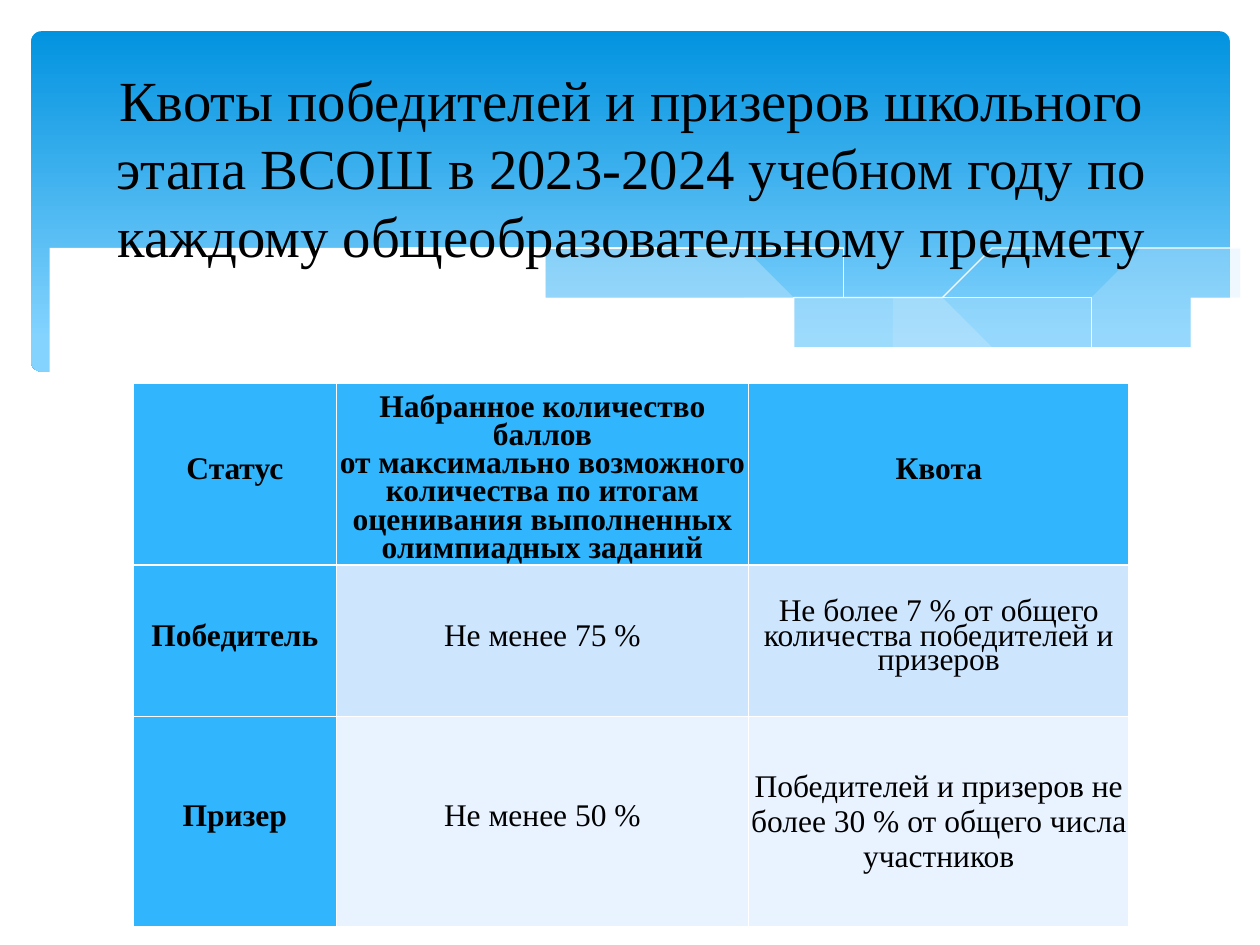
from lxml import etree
from pptx import Presentation
from pptx.dml.color import RGBColor as RGB
from pptx.enum.shapes import MSO_SHAPE as Kind
from pptx.enum.text import MSO_ANCHOR as Anchor, PP_ALIGN as Align
from pptx.oxml.ns import qn
from pptx.util import Cm, Pt

FONT = "Times New Roman"
BLUE, DARK, PALE = "31B6FD", "CEE5FE", "E8F3FF"

# Wave knots, in centimetres
RIGHT_TOP = [(24.77, 5.08), (23.75, 5.26), (22.63, 5.49), (21.13, 5.84),
             (19.13, 6.3), (16.79, 6.73)]
RIGHT_LOW = [(16.79, 6.73), (17.91, 6.88), (19.23, 7.01), (20.68, 7.06),
             (21.92, 6.99), (22.99, 6.83), (23.93, 6.58), (24.77, 6.27)]
MID_TOP = [(22.68, 6.93), (20.5, 6.6), (17.93, 6.1), (15.98, 5.64),
           (14.1, 5.21), (12.42, 4.93), (10.67, 4.75), (9.17, 4.7),
           (7.26, 4.85)]
MID_LOW = [(7.26, 4.85), (9.19, 5.16), (11.4, 5.64), (13.46, 6.1),
           (15.7, 6.55), (17.65, 6.86), (19.33, 7.04), (20.78, 7.06),
           (22.68, 6.93)]
FALL = [(7.85, 4.95), (9.22, 4.8), (11, 4.75), (12.95, 4.88), (14.78, 5.08),
        (16.89, 5.41), (19.3, 5.92), (21.11, 6.38), (23.04, 6.91)]
RISE = [(15.57, 6.53), (17.65, 5.97), (19.71, 5.49), (22, 5.05),
        (23.47, 4.83), (24.77, 4.7)]
EDGE = [(24.82, 6.25), (23.62, 6.65), (22.23, 6.93), (20.55, 7.04),
        (18.44, 6.91), (16.46, 6.65), (14.1, 6.22), (11.35, 5.59),
        (9.27, 5.13), (7.42, 4.83), (5.84, 4.7), (4.5, 4.67),
        (3.02, 4.75), (1.93, 4.95), (0.58, 5.41)]
BASE = [(0.58, 8.36), (24.82, 8.36)]

TITLE = ("Квоты победителей и призеров школьного этапа ВСОШ в 2023-2024 "
         "учебном году по каждому общеобразовательному предмету\v")
ROWS = [
    ["Статус",
     "Набранное количество баллов\vот максимально возможного\v"
     "количества по итогам\vоценивания выполненных\vолимпиадных заданий",
     "Квота"],
    ["Победитель", "Не менее 75 %",
     "Не более 7 % от общего количества победителей и призеров"],
    ["Призер", "Не менее 50 %",
     "Победителей и призеров не более 30 % от общего числа участников"],
]


def color(code):
    return RGB.from_string(code)


def smooth(knots, steps=5):
    """Points of a Catmull-Rom curve through the knots."""
    ends = [knots[0], *knots, knots[-1]]
    out = [knots[0]]
    for a, b, c, d in zip(ends, ends[1:], ends[2:], ends[3:]):
        for n in range(1, steps + 1):
            t = n / steps
            out.append(tuple(
                (2 * q + (r - p) * t + (2 * p - 5 * q + 4 * r - s) * t ** 2
                 + (3 * q - p - 3 * r + s) * t ** 3) / 2
                for p, q, r, s in zip(a, b, c, d)))
    return out


def add_path(slide, points, close):
    pen = slide.shapes.build_freeform(*points[0], scale=Cm(1))
    pen.add_line_segments(points[1:], close=close)
    shape = pen.convert_to_shape()
    shape.shadow.inherit = False
    return shape


def add_wave(slide, points, fill, alpha=100):
    shape = add_path(slide, points, True)
    shape.fill.solid()
    shape.fill.fore_color.rgb = color(fill)
    shape.line.fill.background()
    if alpha < 100:
        tone = shape._element.spPr.find(qn("a:solidFill"))[0]
        etree.SubElement(tone, qn("a:alpha"), val=str(alpha * 1000))


def add_curve(slide, knots):
    shape = add_path(slide, smooth(knots), False)
    shape.fill.background()
    shape.line.color.rgb = color("FFFFFF")
    shape.line.width = Pt(0)


def add_band(slide):
    band = slide.shapes.add_shape(Kind.ROUNDED_RECTANGLE, Cm(0.63), Cm(0.63),
                                  Cm(24.16), Cm(6.86))
    band.adjustments[0] = 0.03
    band.shadow.inherit = False
    band.line.fill.background()
    band.fill.gradient()
    band.fill.gradient_angle = 270
    stops = [(0, "0293E0"), (0.9, "83D3FE")]
    for stop, (place, code) in zip(band.fill.gradient_stops, stops):
        stop.position = place
        stop.color.rgb = color(code)


def set_text(frame, text, size, bold=False, gap=None):
    frame.text = text
    para = frame.paragraphs[0]
    para.alignment = Align.CENTER
    para.line_spacing = gap
    para.font.name, para.font.size, para.font.bold = FONT, Pt(size), bold
    para.font.color.rgb = color("000000")


def add_title(slide):
    box = slide.shapes.add_textbox(Cm(1.3), Cm(2.31), Cm(22.86), Cm(3.48))
    frame = box.text_frame
    frame.word_wrap = True
    frame.vertical_anchor = Anchor.MIDDLE
    set_text(frame, TITLE, 32.4)


def add_quotas(slide):
    table = slide.shapes.add_table(3, 3, Cm(2.69), Cm(7.73),
                                   Cm(20.07), Cm(10.95)).table
    table.first_col = True
    for col, width in zip(table.columns, (4.09, 8.31, 7.67)):
        col.width = Cm(width)
    for row, height in zip(table.rows, (3.66, 3.05, 4.24)):
        row.height = Cm(height)
    for r, line in enumerate(ROWS):
        for c, text in enumerate(line):
            cell = table.cell(r, c)
            head = r == 0 or c == 0
            cell.fill.solid()
            cell.fill.fore_color.rgb = color(BLUE if head else (DARK, PALE)[r - 1])
            cell.margin_left = cell.margin_right = Cm(0.03)
            cell.margin_top = cell.margin_bottom = 0
            cell.vertical_anchor = Anchor.MIDDLE
            set_text(cell.text_frame, text, 18, head, Pt(14))
    # The long heading and the last quota are spaced differently
    table.cell(0, 1).vertical_anchor = Anchor.BOTTOM
    table.cell(0, 1).text_frame.paragraphs[0].line_spacing = Pt(16.1)
    table.cell(2, 2).text_frame.paragraphs[0].line_spacing = None


def main():
    deck = Presentation()
    deck.slide_width, deck.slide_height = Cm(25.4), Cm(19.05)
    slide = deck.slides.add_slide(deck.slide_layouts[6])
    # Wavy header
    add_band(slide)
    add_wave(slide, smooth(RIGHT_TOP) + smooth(RIGHT_LOW), "C6E7FC", 29)
    add_wave(slide, smooth(MID_TOP) + smooth(MID_LOW), "C6E7FC", 40)
    add_curve(slide, FALL)
    add_curve(slide, RISE)
    add_wave(slide, smooth(EDGE) + BASE, "FFFFFF")
    # Content
    add_title(slide)
    add_quotas(slide)
    deck.save("out.pptx")


if __name__ == "__main__":
    main()
